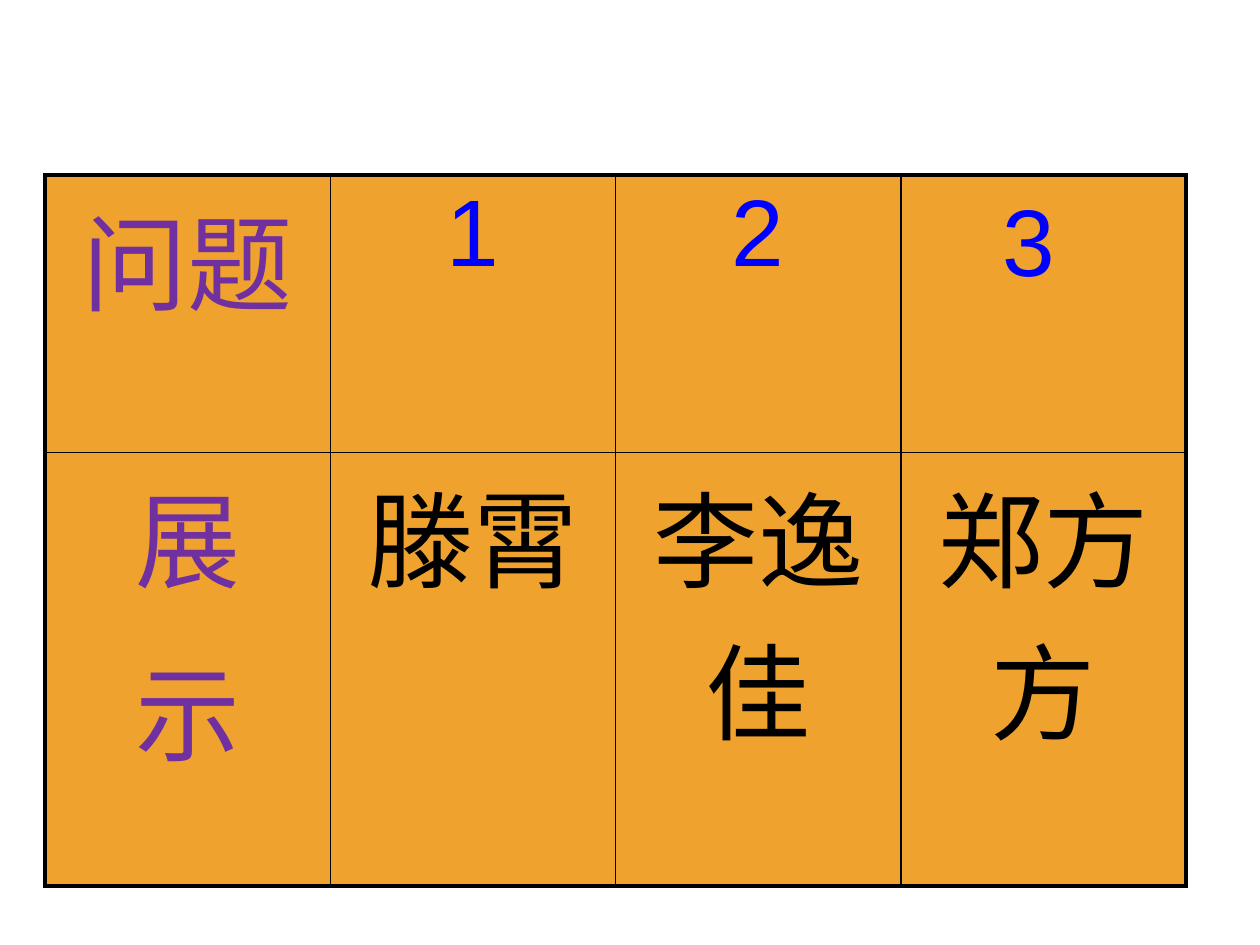
from dataclasses import dataclass

from lxml.etree import SubElement
from pptx import Presentation
from pptx.dml.color import RGBColor
from pptx.enum.text import PP_ALIGN
from pptx.oxml.ns import qn
from pptx.util import Cm, Pt

ORANGE = RGBColor(0xF0, 0xA2, 0x2E)
PURPLE = RGBColor(0x70, 0x30, 0xA0)
BLUE = RGBColor(0x00, 0x00, 0xFF)
BLACK = RGBColor(0x00, 0x00, 0x00)
FONT = "Arial"
INNER, OUTER = Pt(1), Pt(2.25)


@dataclass
class Entry:
    text: str
    color: RGBColor
    size: int = 60


ROWS = [
    [Entry("问题", PURPLE), Entry("1", BLUE, 54), Entry("2", BLUE, 54), Entry("3", BLUE, 54)],
    [Entry("展\n示", PURPLE), Entry("滕霄", BLACK), Entry("李逸佳", BLACK), Entry("郑方方", BLACK)],
]
ROW_HEIGHTS = [Cm(5.59), Cm(8.74)]
COL_WIDTH = Cm(5.75)


def format_run(r, size: int, color: RGBColor) -> None:
    r.font.name = FONT
    r.font.size = Pt(size)
    r.font.color.rgb = color


def fill_cell(cell, entry: Entry) -> None:
    cell.text_frame.text = entry.text
    for i, p in enumerate(cell.text_frame.paragraphs):
        p.alignment = PP_ALIGN.CENTER
        if i:
            p.space_before = Pt(entry.size * 0.2)
        for r in p.runs:
            format_run(r, entry.size, entry.color)


def set_borders(cell, widths: dict) -> None:
    tc_pr = cell._tc.get_or_add_tcPr()
    for side, width in widths.items():
        ln = SubElement(tc_pr, qn(f"a:{side}"), w=str(int(width)))
        SubElement(SubElement(ln, qn("a:solidFill")), qn("a:srgbClr"), val=str(BLACK))


prs = Presentation()
prs.slide_width, prs.slide_height = Cm(25.4), Cm(19.05)
slide = prs.slides.add_slide(prs.slide_layouts[6])

# Table grid
n_rows, n_cols = len(ROWS), len(ROWS[0])
table = slide.shapes.add_table(
    n_rows, n_cols, Cm(0.91), Cm(3.53), COL_WIDTH * n_cols, sum(ROW_HEIGHTS)
).table
table.first_row = table.horz_banding = False
for col in table.columns:
    col.width = COL_WIDTH
for row, height in zip(table.rows, ROW_HEIGHTS):
    row.height = height

# Cells: heavy lines outside, thin lines inside
for i, entries in enumerate(ROWS):
    for j, entry in enumerate(entries):
        cell = table.cell(i, j)
        fill_cell(cell, entry)
        set_borders(cell, {
            "lnL": OUTER if j == 0 else INNER,
            "lnR": OUTER if j == n_cols - 1 else INNER,
            "lnT": OUTER if i == 0 else INNER,
            "lnB": OUTER if i == n_rows - 1 else INNER,
        })
        cell.fill.solid()
        cell.fill.fore_color.rgb = ORANGE

# The last number is followed by a larger space
r = table.cell(0, n_cols - 1).text_frame.paragraphs[0].add_run()
r.text = " "
format_run(r, 60, BLACK)

prs.save("out.pptx")
